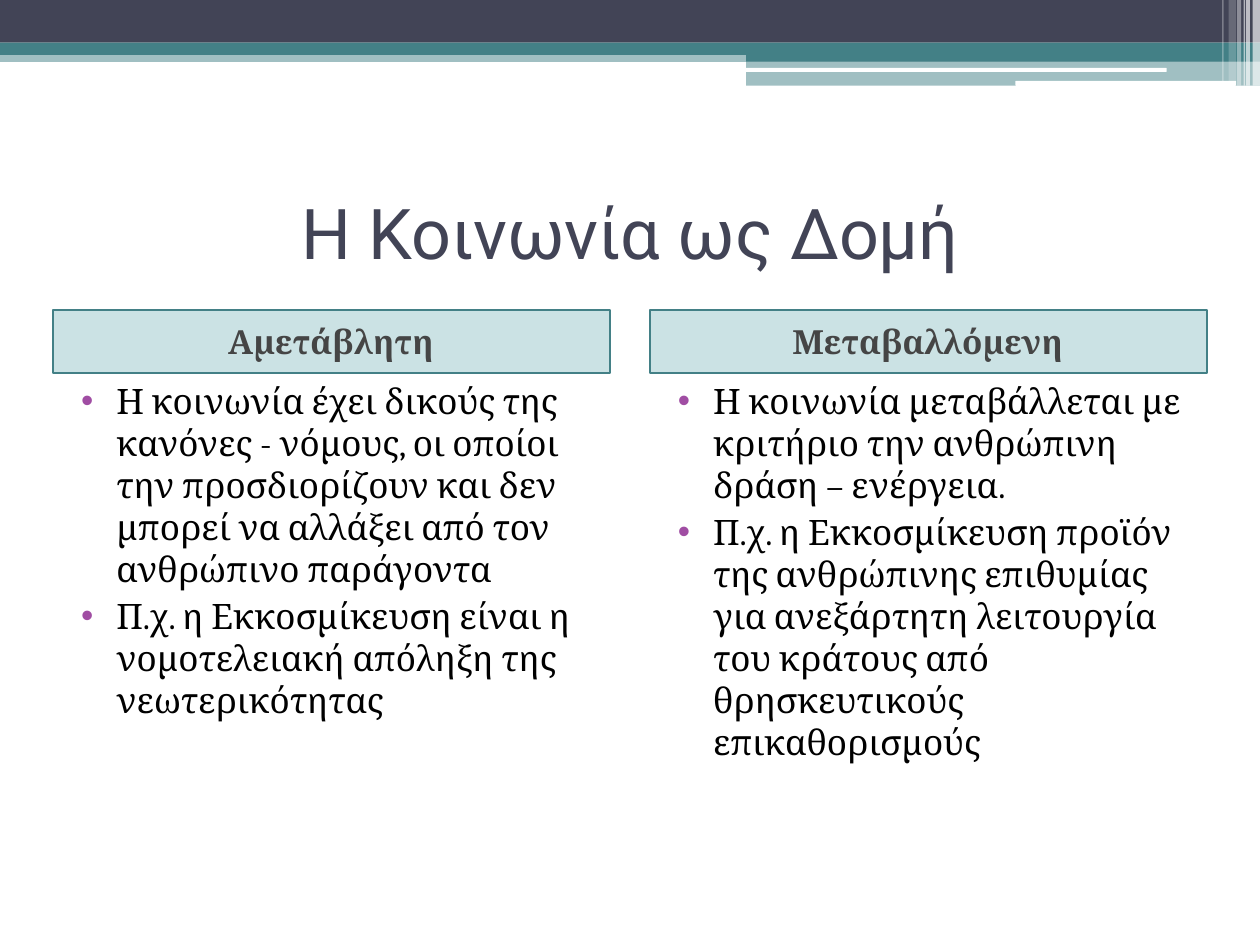
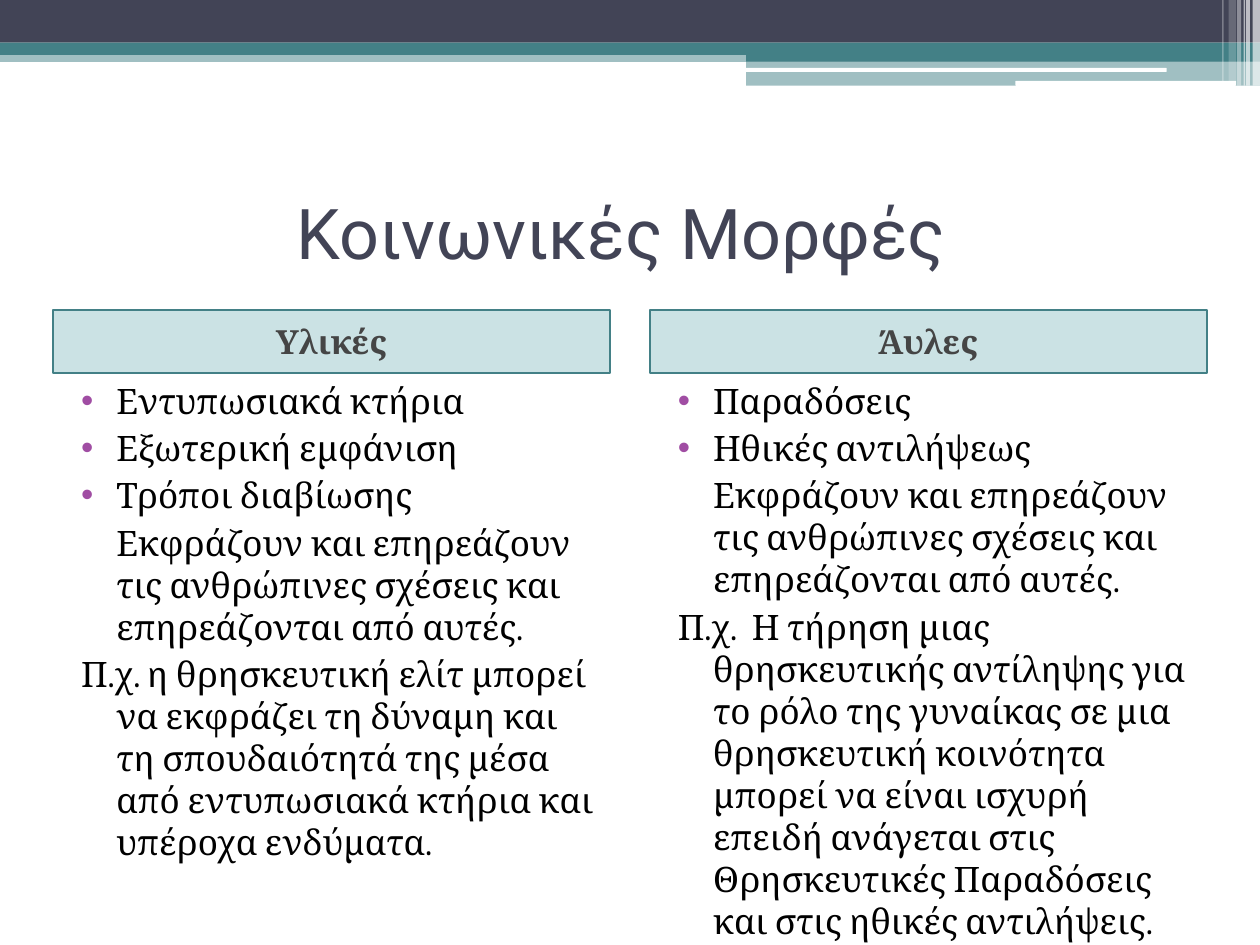
import pptx
import pptx.util
import pptx.dml.color
import pptx.enum.shapes
import pptx.enum.text
import pptx.oxml.ns
import lxml.etree

Cm, Pt = pptx.util.Cm, pptx.util.Pt

# Content: title, then two columns of (heading, items); an item is (kind, text)
BOTH = ("more", "Εκφράζουν και επηρεάζουν τις ανθρώπινες σχέσεις και "
                "επηρεάζονται από αυτές.")
SLIDES = [
    ("Η Κοινωνία ως Δομή", [
        ("Αμετάβλητη ", [
            ("dot", "Η κοινωνία έχει δικούς της κανόνες - νόμους, οι οποίοι την "
                    "προσδιορίζουν και δεν μπορεί να αλλάξει από τον ανθρώπινο "
                    "παράγοντα"),
            ("dot", "Π.χ. η Εκκοσμίκευση είναι η νομοτελειακή απόληξη της "
                    "νεωτερικότητας"),
        ]),
        ("Μεταβαλλόμενη ", [
            ("dot", "Η κοινωνία μεταβάλλεται με κριτήριο την ανθρώπινη δράση – "
                    "ενέργεια."),
            ("dot", "Π.χ. η Εκκοσμίκευση προϊόν της ανθρώπινης επιθυμίας για "
                    "ανεξάρτητη λειτουργία του κράτους από θρησκευτικούς "
                    "επικαθορισμούς"),
        ]),
    ]),
    ("Κοινωνικές Μορφές ", [
        ("Υλικές ", [
            ("dot", "Εντυπωσιακά κτήρια"),
            ("dot", "Εξωτερική εμφάνιση"),
            ("dot", "Τρόποι διαβίωσης"),
            BOTH,
            ("hang", "Π.χ. η θρησκευτική ελίτ μπορεί να εκφράζει τη δύναμη και "
                     "τη σπουδαιότητά της μέσα από εντυπωσιακά κτήρια και "
                     "υπέροχα ενδύματα."),
        ]),
        ("Άυλες ", [
            ("dot", "Παραδόσεις"),
            ("dot", "Ηθικές αντιλήψεως"),
            BOTH,
            ("hang", "Π.χ.  Η τήρηση μιας θρησκευτικής αντίληψης για το ρόλο της "
                     "γυναίκας σε μια θρησκευτική κοινότητα μπορεί να είναι "
                     "ισχυρή επειδή ανάγεται στις Θρησκευτικές Παραδόσεις και "
                     "στις ηθικές αντιλήψεις."),
        ]),
    ]),
]


class Theme:
    dark, teal, white = "424456", "438086", "FFFFFF"
    tint, grey, black, dot = "328E97", "454545", "000000", "A04DA3"
    # font, size, colour, bold
    title = ("Roboto", 40, dark, False)
    head = ("Cambria", 19, grey, True)
    body = ("Cambria", 20, black, False)


# Layout in cm
WIDE, HIGH = 25.4, 19.05
EDGE, COL = 1.07, 11.23
TITLE = (EDGE, 3.18, WIDE - 2 * EDGE, 2.97)
HEAD_TOP, HEAD_HIGH, BODY_HIGH = 6.25, 1.27, 10.8
HALF, TALL, SHORT = 15.04, 1.73, 1.63

# Bands: left, top, width, height, colour, opacity in percent
BANDS = [
    (0, 1.02, WIDE, 0.23, Theme.teal, 50),
    (0, 0, WIDE, 0.86, Theme.dark, 100),
    (0, 0.86, WIDE, 0.25, Theme.teal, 100),
    (HALF, 0.99, WIDE - HALF, 0.25, Theme.teal, 100),
    (HALF, 1.22, WIDE - HALF, 0.51, Theme.teal, 50),
]
PILLS = [
    (15.01, 1.37, 8.51, 0.08, Theme.white, 100),
    (20.47, SHORT, 4.45, 0.1, Theme.white, 100),
]
# Strips: left, width, height, opacity
STRIPS = [
    (25.25, 0.15, TALL, 65), (25.12, 0.08, TALL, 65), (25.07, 0.03, TALL, 60),
    (24.94, 0.08, TALL, 40), (24.77, 0.15, SHORT, 20), (24.64, 0.03, SHORT, 30),
]


def rgb(code):
    return pptx.dml.color.RGBColor.from_string(code)


def sub(node, tag, **attrs):
    return lxml.etree.SubElement(node, pptx.oxml.ns.qn(tag), **attrs)


def paint(shape, code, alpha):
    shape.fill.solid()
    shape.fill.fore_color.rgb = rgb(code)
    if alpha < 100:
        color = shape.element.spPr.find(".//" + pptx.oxml.ns.qn("a:srgbClr"))
        sub(color, "a:alpha", val=str(alpha * 1000))


def place(shape, box):
    shape.left, shape.top, shape.width, shape.height = map(Cm, box)


def write(par, text, style):
    run = par.add_run()
    run.text = text
    font = run.font
    font.name, size, code, font.bold = style
    font.size = Pt(size)
    font.color.rgb = rgb(code)


def set_par(par, left, first, dot=False):
    """Set spacing, indents and bullet of a paragraph."""
    par.space_before = Pt(3)
    props = par._p.get_or_add_pPr()
    props.set("marL", str(Cm(left)))
    props.set("indent", str(Cm(first)))
    if dot:
        sub(sub(props, "a:buClr"), "a:srgbClr", val=Theme.dot)
        sub(props, "a:buFont", typeface="Arial")
        sub(props, "a:buChar", char="•")
    else:
        sub(props, "a:buNone")


def frame(shape, box, anchor):
    place(shape, box)
    text = shape.text_frame
    text.word_wrap = True
    text.auto_size = pptx.enum.text.MSO_AUTO_SIZE.NONE
    text.vertical_anchor = anchor
    return text


def add_bands(slide, layout):
    """Draw the top bands once and hand them to the shared layout."""
    kinds = pptx.enum.shapes.MSO_SHAPE
    strips = [(x, 0, w, h, Theme.white, a) for x, w, h, a in STRIPS]
    parts = [(kinds.RECTANGLE, band) for band in BANDS]
    parts += [(kinds.ROUNDED_RECTANGLE, pill) for pill in PILLS]
    parts += [(kinds.RECTANGLE, strip) for strip in strips]
    for num, (kind, (*box, code, alpha)) in enumerate(parts):
        shape = slide.shapes.add_shape(kind, *map(Cm, box))
        shape.shadow.inherit = False
        shape.line.fill.background()
        paint(shape, code, alpha)
        shape.element.xpath("./p:nvSpPr/p:cNvPr")[0].set("id", str(100 + num))
        layout.shapes.element.insert(2 + num, shape.element)


def add_col(slide, col, head, items):
    """Fill one heading and the list below it."""
    anchors = pptx.enum.text.MSO_ANCHOR
    left = EDGE if col == 0 else WIDE - EDGE - COL
    # Heading
    shape = slide.placeholders[1 + 2 * col]
    text = frame(shape, (left, HEAD_TOP, COL, HEAD_HIGH), anchors.MIDDLE)
    paint(shape, Theme.tint, 25)
    shape.line.color.rgb = rgb(Theme.teal)
    shape.line.width = Pt(1)
    par = text.paragraphs[0]
    par.alignment = pptx.enum.text.PP_ALIGN.CENTER
    set_par(par, 0.13, 0)
    write(par, head, Theme.head)
    # List
    box = (left, HEAD_TOP + HEAD_HIGH, COL, BODY_HIGH)
    text = frame(slide.placeholders[2 + 2 * col], box, anchors.TOP)
    for num, (kind, words) in enumerate(items):
        par = text.add_paragraph() if num else text.paragraphs[0]
        set_par(par, 1.02, 0 if kind == "more" else -0.71, kind == "dot")
        write(par, words, Theme.body)


def main():
    deck = pptx.Presentation()
    deck.slide_width, deck.slide_height = Cm(WIDE), Cm(HIGH)
    layout = deck.slide_layouts[4]
    for num, (title, cols) in enumerate(SLIDES):
        slide = deck.slides.add_slide(layout)
        if num == 0:
            add_bands(slide, layout)
        text = frame(slide.shapes.title, TITLE, pptx.enum.text.MSO_ANCHOR.MIDDLE)
        par = text.paragraphs[0]
        par.alignment = pptx.enum.text.PP_ALIGN.CENTER
        write(par, title, Theme.title)
        for col, (head, items) in enumerate(cols):
            add_col(slide, col, head, items)
    deck.save("out.pptx")


if __name__ == "__main__":
    main()
